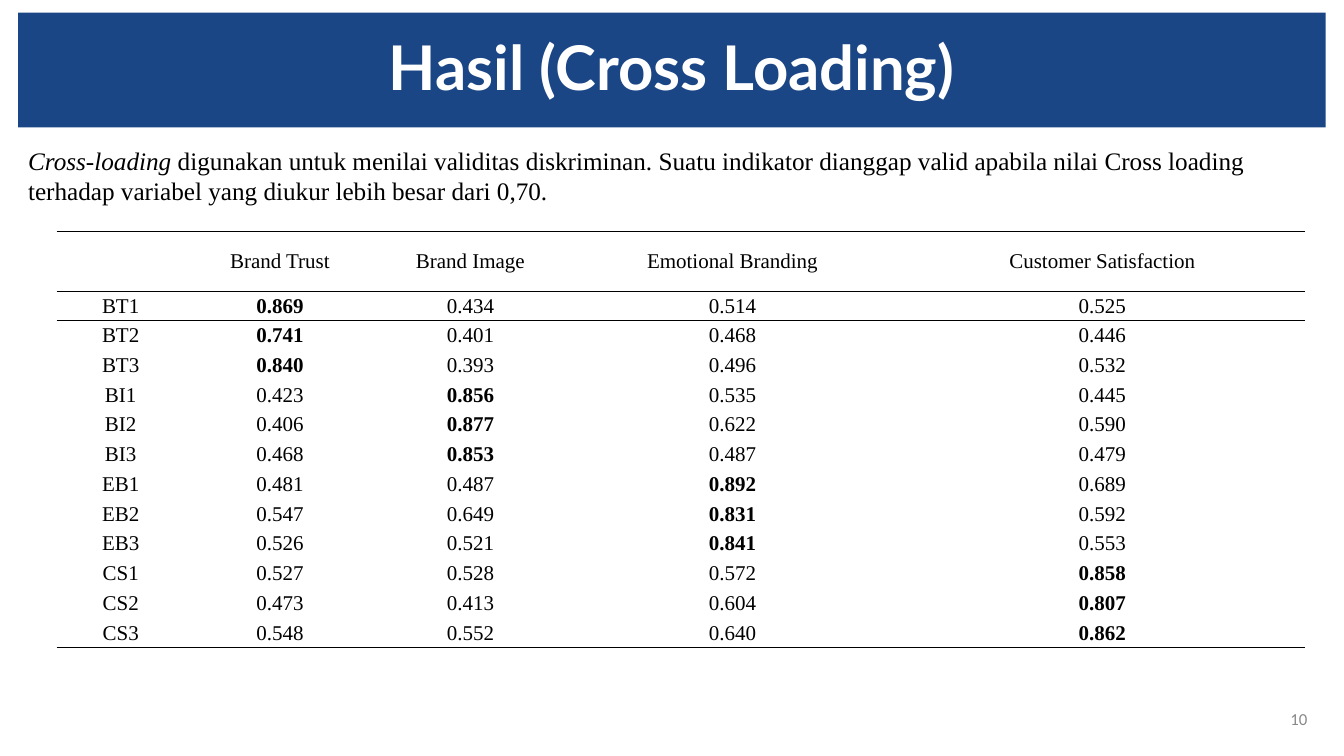
from lxml import etree
from pptx import Presentation
from pptx.dml.color import RGBColor
from pptx.enum.shapes import MSO_SHAPE
from pptx.enum.text import MSO_ANCHOR, PP_ALIGN
from pptx.oxml.ns import qn
from pptx.util import Pt

RECT = MSO_SHAPE.RECTANGLE
MIDDLE = MSO_ANCHOR.MIDDLE
CENTER, RIGHT = PP_ALIGN.CENTER, PP_ALIGN.RIGHT
SERIF = "Times New Roman"
NO_STYLE = "{2D5ABB26-0587-4C30-8999-92F81FD0307C}"
THRESHOLD = 0.70

HEADERS = ["", "Brand Trust", "Brand Image", "Emotional Branding", "Customer Satisfaction"]
LOADINGS = [
    ["BT1", "0.869", "0.434", "0.514", "0.525"],
    ["BT2", "0.741", "0.401", "0.468", "0.446"],
    ["BT3", "0.840", "0.393", "0.496", "0.532"],
    ["BI1", "0.423", "0.856", "0.535", "0.445"],
    ["BI2", "0.406", "0.877", "0.622", "0.590"],
    ["BI3", "0.468", "0.853", "0.487", "0.479"],
    ["EB1", "0.481", "0.487", "0.892", "0.689"],
    ["EB2", "0.547", "0.649", "0.831", "0.592"],
    ["EB3", "0.526", "0.521", "0.841", "0.553"],
    ["CS1", "0.527", "0.528", "0.572", "0.858"],
    ["CS2", "0.473", "0.413", "0.604", "0.807"],
    ["CS3", "0.548", "0.552", "0.640", "0.862"],
]
COLUMN_SHARES = [1.27, 1.89, 1.89, 3.31, 4.03]


def color(value):
    """Turn a hex string into a colour."""
    return RGBColor.from_string(value)


def style(font, name, size, hex_color, bold=False, italic=False):
    """Set the look of a font."""
    font.name, font.size = name, Pt(size)
    font.bold, font.italic = bold, italic
    font.color.rgb = color(hex_color)


def add_title(s, x, y, w, h):
    """Draw the title band."""
    sp = s.shapes.add_shape(RECT, Pt(x), Pt(y), Pt(w), Pt(h))
    sp.shadow.inherit = False
    sp.fill.solid()
    sp.fill.fore_color.rgb = color("1B4685")
    sp.line.fill.background()
    tf = sp.text_frame
    tf.word_wrap = True
    tf.vertical_anchor = MIDDLE
    tf.text = "Hasil (Cross Loading)"
    p = tf.paragraphs[0]
    p.alignment, p.line_spacing = CENTER, 0.9
    style(p.runs[0].font, "Lato", 44, "FFFFFF", bold=True)


def add_intro(s, x, y, w, h):
    """Write the explanation under the title."""
    tf = s.shapes.add_textbox(Pt(x), Pt(y), Pt(w), Pt(h)).text_frame
    tf.word_wrap = True
    p = tf.paragraphs[0]
    for text, italic in [
        ("Cross-loading", True),
        (" digunakan untuk menilai validitas diskriminan. Suatu indikator dianggap valid "
         "apabila nilai Cross loading terhadap variabel yang diukur lebih besar dari 0,70.", False),
    ]:
        r = p.add_run()
        r.text = text
        style(r.font, SERIF, 18, "000000", italic=italic)


def add_border(cell, side):
    """Rule one side of a cell, T or B, in black."""
    ln = etree.SubElement(cell._tc.get_or_add_tcPr(), qn("a:ln" + side), w=str(Pt(1)))
    fill = etree.SubElement(ln, qn("a:solidFill"))
    etree.SubElement(fill, qn("a:srgbClr"), val="000000")


def fill_cell(cell, text, bold, sides):
    """Write and format one table cell."""
    for side in sides:
        add_border(cell, side)
    cell.fill.background()
    cell.vertical_anchor = MIDDLE
    cell.margin_left = cell.margin_right = Pt(5)
    cell.margin_top = cell.margin_bottom = 0
    cell.text_frame.text = text
    p = cell.text_frame.paragraphs[0]
    p.alignment = CENTER
    style(p.font, SERIF, 15, "000000", bold)
    for r in p.runs:
        style(r.font, SERIF, 15, "000000", bold)


def add_loadings(s, x, y, w, h):
    """Build the table, with a header twice as tall as a row."""
    rows = [HEADERS] + LOADINGS
    frame = s.shapes.add_table(len(rows), len(HEADERS), Pt(x), Pt(y), Pt(w), Pt(h))
    table = frame.table
    table.first_row = table.horz_banding = False
    table._tbl.tblPr.find(qn("a:tableStyleId")).text = NO_STYLE
    for column, share in zip(table.columns, COLUMN_SHARES):
        column.width = Pt(w * share / sum(COLUMN_SHARES))
    row_height = h / (len(rows) + 1)
    borders = {0: "TB", 1: "T", len(rows) - 1: "B"}
    for i, values in enumerate(rows):
        table.rows[i].height = Pt(row_height * (2 if i == 0 else 1))
        for j, text in enumerate(values):
            bold = i > 0 and j > 0 and float(text) > THRESHOLD
            fill_cell(table.cell(i, j), text, bold, borders.get(i, ""))


def add_page_number(s, x, y, w, h):
    """Write the page number."""
    tf = s.shapes.add_textbox(Pt(x), Pt(y), Pt(w), Pt(h)).text_frame
    tf.word_wrap = True
    tf.vertical_anchor = MIDDLE
    tf.text = "10"
    p = tf.paragraphs[0]
    p.alignment = RIGHT
    style(p.runs[0].font, "Calibri", 12, "888888")


def main():
    """Build and save the slide."""
    prs = Presentation()
    prs.slide_width, prs.slide_height = Pt(960), Pt(540)
    s = prs.slides.add_slide(prs.slide_layouts[6])
    add_page_number(s, 900, 499, 41, 28.8)
    add_title(s, 13, 9, 934, 82)
    add_loadings(s, 40.5, 165.5, 892, 297.4)
    add_intro(s, 13, 100, 947, 51)
    prs.save("out.pptx")


if __name__ == "__main__":
    main()
